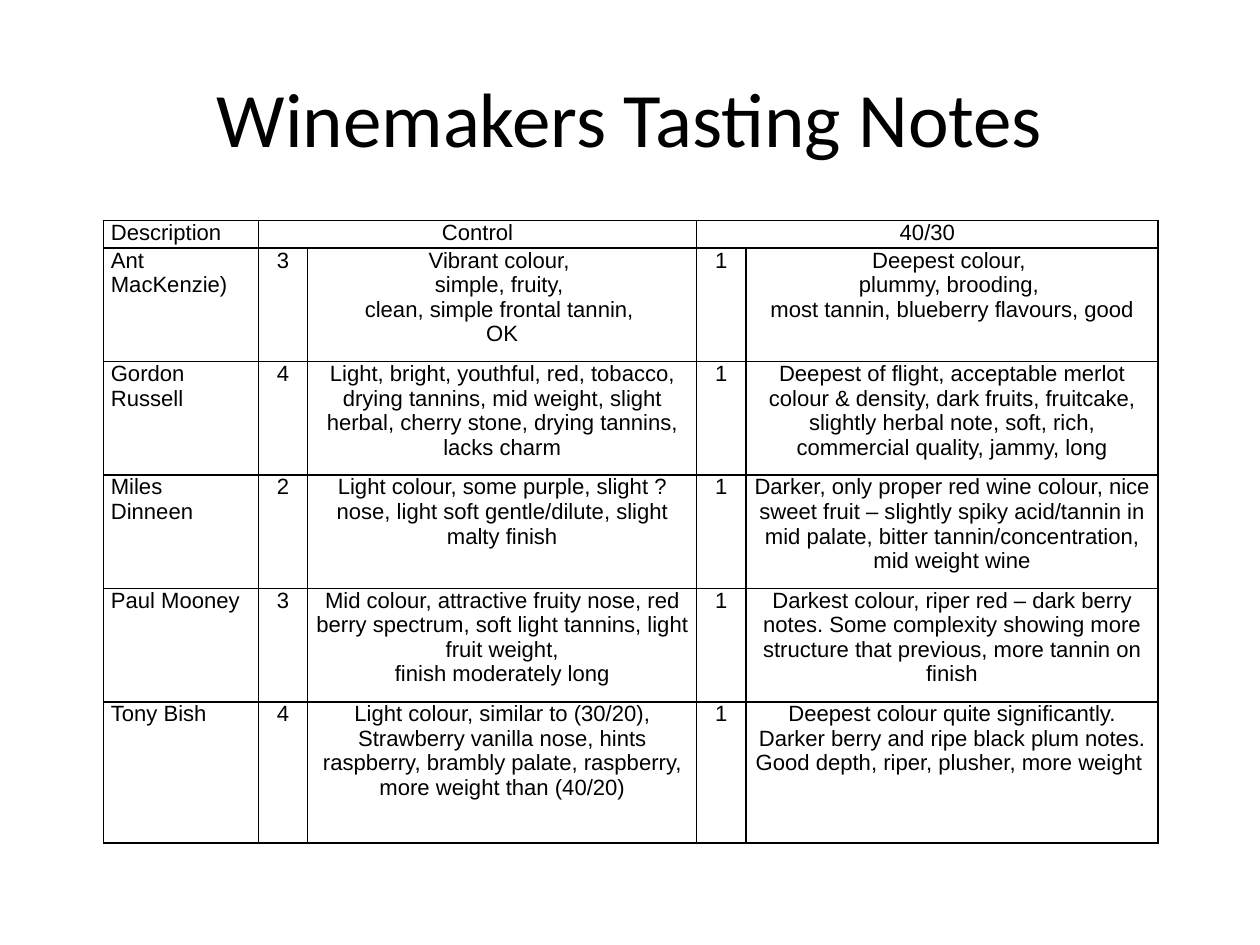
from dataclasses import dataclass

from lxml.etree import SubElement
from pptx import Presentation
from pptx.dml.color import RGBColor
from pptx.enum.text import MSO_ANCHOR, PP_ALIGN
from pptx.oxml.ns import qn
from pptx.slide import Slide
from pptx.table import Table, _Cell
from pptx.text.text import _Paragraph
from pptx.util import Inches, Pt


@dataclass(frozen=True)
class Theme:
    ink: str = "000000"
    paper: str = "FFFFFF"
    title_font: str = "Calibri"
    table_font: str = "Arial"
    title_size: float = 44
    table_size: float = 12.6
    rule_width: float = 1


@dataclass(frozen=True)
class TastingNote:
    winemaker: str
    control_rank: int
    control_note: str
    trial_rank: int
    trial_note: str


THEME = Theme()
COLUMN_WIDTHS = (1.23, 0.39, 3.09, 0.39, 3.27)
ROW_HEIGHTS = (0.22, 0.9, 0.9, 0.9, 0.9, 1.12)
HEADINGS = {0: "Description", 1: "Control", 3: "40/30"}
TASTING_NOTES = (
    TastingNote(
        "Ant\nMacKenzie)",
        3,
        "Vibrant colour, \nsimple, fruity, \nclean, simple frontal tannin, \nOK",
        1,
        "Deepest colour, \nplummy, brooding, \nmost tannin, blueberry flavours, good",
    ),
    TastingNote(
        "Gordon\nRussell",
        4,
        "Light, bright, youthful, red, tobacco, drying tannins, mid weight, "
        "slight herbal, cherry stone, drying tannins, lacks charm",
        1,
        "Deepest of flight, acceptable merlot colour & density, dark fruits, "
        "fruitcake, slightly herbal note, soft, rich, commercial quality, jammy, long",
    ),
    TastingNote(
        "Miles\nDinneen",
        2,
        "Light colour, some purple, slight ? nose, light soft gentle/dilute, "
        "slight malty finish",
        1,
        "Darker, only proper red wine colour, nice sweet fruit – slightly spiky "
        "acid/tannin in mid palate, bitter tannin/concentration, mid weight wine",
    ),
    TastingNote(
        "Paul Mooney",
        3,
        "Mid colour, attractive fruity nose, red berry spectrum, soft light tannins, "
        "light fruit weight,\nfinish moderately long",
        1,
        "Darkest colour, riper red – dark berry notes. Some complexity showing more "
        "structure that previous, more tannin on finish",
    ),
    TastingNote(
        "Tony Bish",
        4,
        "Light colour, similar to (30/20), Strawberry vanilla nose, hints raspberry, "
        "brambly palate, raspberry, more weight than (40/20)",
        1,
        "Deepest colour quite significantly. Darker berry and ripe black plum notes. "
        "Good depth, riper, plusher, more weight ",
    ),
)


def add_run(paragraph: _Paragraph, wording: str, font: str, size: float) -> None:
    """Append one run in the theme's ink."""
    run = paragraph.add_run()
    run.text = wording
    run.font.name = font
    run.font.size = Pt(size)
    run.font.color.rgb = RGBColor.from_string(THEME.ink)


def rule_cell(cell: _Cell) -> None:
    """Draw the four borders of a cell and fill it with paper."""
    properties = cell._tc.get_or_add_tcPr()
    for side in ("a:lnL", "a:lnR", "a:lnT", "a:lnB"):
        border = SubElement(properties, qn(side), w=str(Pt(THEME.rule_width)))
        ink = SubElement(border, qn("a:solidFill"))
        SubElement(ink, qn("a:srgbClr"), val=THEME.ink)
    cell.fill.solid()
    cell.fill.fore_color.rgb = RGBColor.from_string(THEME.paper)


def write_cell(cell: _Cell, wording: str, alignment: PP_ALIGN) -> None:
    """Write each line of the wording as its own paragraph."""
    cell.vertical_anchor = MSO_ANCHOR.TOP
    for index, line in enumerate(wording.split("\n")):
        frame = cell.text_frame
        paragraph = frame.add_paragraph() if index else frame.paragraphs[0]
        paragraph.alignment = alignment
        add_run(paragraph, line, THEME.table_font, THEME.table_size)


def column_alignment(column: int) -> PP_ALIGN:
    """Set names to the left and centre everything else."""
    return PP_ALIGN.CENTER if column else PP_ALIGN.LEFT


def write_note(table: Table, row: int, note: TastingNote) -> None:
    """Fill one table row with a winemaker's ranks and notes."""
    entries = (note.winemaker, note.control_rank, note.control_note,
               note.trial_rank, note.trial_note)
    for column, entry in enumerate(entries):
        write_cell(table.cell(row, column), str(entry), column_alignment(column))


def add_title(slide: Slide) -> None:
    """Place the heading in the title placeholder."""
    title = slide.shapes.title
    title.left, title.top = Inches(0.5), Inches(0.3)
    title.width, title.height = Inches(9), Inches(1.25)
    title.text_frame.vertical_anchor = MSO_ANCHOR.MIDDLE
    heading = title.text_frame.paragraphs[0]
    heading.alignment = PP_ALIGN.CENTER
    add_run(heading, "Winemakers Tasting Notes", THEME.title_font, THEME.title_size)


def add_tasting_table(slide: Slide) -> None:
    """Build the ruled table of tasting notes."""
    table = slide.shapes.add_table(
        len(ROW_HEIGHTS), len(COLUMN_WIDTHS), Inches(0.82), Inches(1.75),
        Inches(sum(COLUMN_WIDTHS)), Inches(sum(ROW_HEIGHTS)),
    ).table
    table.first_row = table.horz_banding = False
    for column, width in zip(table.columns, COLUMN_WIDTHS):
        column.width = Inches(width)
    for row, height in zip(table.rows, ROW_HEIGHTS):
        row.height = Inches(height)
    for cell in table.iter_cells():
        cell.margin_left = cell.margin_right = Inches(0.06)
        cell.margin_top = cell.margin_bottom = Inches(0)
        rule_cell(cell)
    for column, heading in HEADINGS.items():
        if column:
            table.cell(0, column).merge(table.cell(0, column + 1))
        write_cell(table.cell(0, column), heading, column_alignment(column))
    for row, note in enumerate(TASTING_NOTES, start=1):
        write_note(table, row, note)


def main() -> None:
    """Build and save the slide."""
    presentation = Presentation()
    presentation.slide_width, presentation.slide_height = Inches(10), Inches(7.5)
    slide = presentation.slides.add_slide(presentation.slide_layouts[5])
    add_title(slide)
    add_tasting_table(slide)
    presentation.save("out.pptx")


if __name__ == "__main__":
    main()
